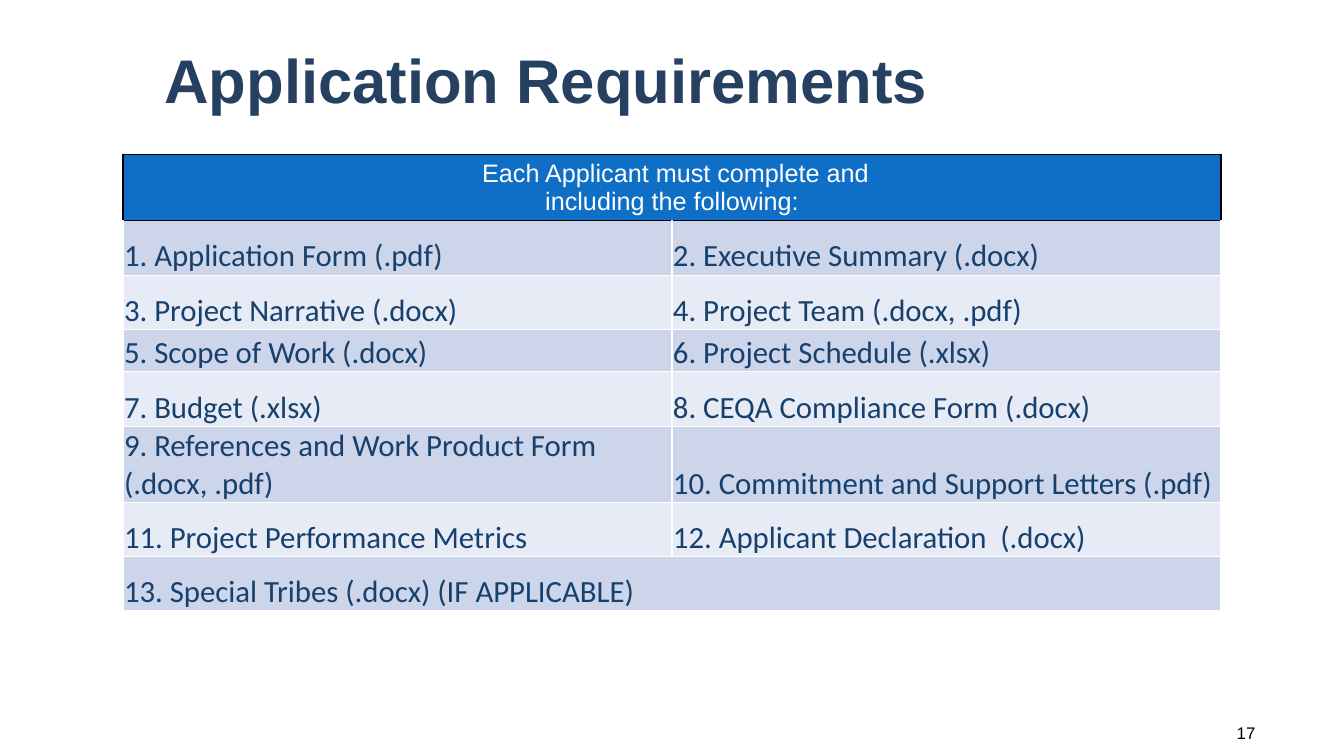
from lxml.etree import SubElement
from pptx import Presentation
from pptx.dml.color import RGBColor
from pptx.enum.text import MSO_ANCHOR, PP_ALIGN
from pptx.oxml.ns import qn
from pptx.util import Inches, Pt

TITLE = "Application Requirements"
HEADER = " Each Applicant must complete and\nincluding the following:"
REQUIREMENTS = [
    "1. Application Form (.pdf)",
    "2. Executive Summary (.docx)",
    "3. Project Narrative (.docx)",
    "4. Project Team (.docx, .pdf)",
    "5. Scope of Work (.docx)",
    "6. Project Schedule (.xlsx)",
    "7. Budget (.xlsx)",
    "8. CEQA Compliance Form (.docx)",
    "9. References and Work Product Form (.docx, .pdf)",
    "10. Commitment and Support Letters (.pdf)",
    "11. Project Performance Metrics",
    "12. Applicant Declaration  (.docx)",
    "13. Special Tribes (.docx) (IF APPLICABLE)",
]
PAGE_NUMBER = "17"
COLORS = {
    "title": "254061",
    "header": "0F6FC6",
    "text": "17406D",
    "odd": "CCD5EA",
    "even": "E7EBF5",
    "white": "FFFFFF",
    "black": "000000",
}
COLUMNS = 2
ROW_HEIGHT = 0.54
SPECIAL_HEIGHTS = {3: 0.42, 5: 0.58}
TABLE_LEFT, TABLE_TOP, TABLE_WIDTH = 1.22, 1.53, 10.89


def format_text(text_frame, font_name, size, color, alignment, bold=False):
    for paragraph in text_frame.paragraphs:
        paragraph.alignment = alignment
        for run in paragraph.runs:
            run.font.name = font_name
            run.font.size = Pt(size)
            run.font.bold = bold
            run.font.color.rgb = RGBColor.from_string(COLORS[color])


def style_cell(cell, fill, border, top_border):
    properties = cell._tc.get_or_add_tcPr()
    for side in ("L", "R", "T", "B"):
        line = SubElement(properties, qn(f"a:ln{side}"), w=str(Pt(1)))
        solid = SubElement(line, qn("a:solidFill"))
        color = top_border if side == "T" else border
        SubElement(solid, qn("a:srgbClr"), val=COLORS[color])
    cell.fill.solid()
    cell.fill.fore_color.rgb = RGBColor.from_string(COLORS[fill])


def add_title(slide):
    title = slide.shapes.title
    title.left, title.top = Inches(1.53), Inches(0.26)
    title.width, title.height = Inches(10.89), Inches(1.14)
    title.text_frame.text = TITLE
    title.text_frame.vertical_anchor = MSO_ANCHOR.MIDDLE
    title.text_frame.paragraphs[0].line_spacing = 0.9
    format_text(title.text_frame, "Arial", 44, "title", PP_ALIGN.LEFT, True)


def add_requirements(slide):
    row_count = 1 + -(-len(REQUIREMENTS) // COLUMNS)
    heights = [SPECIAL_HEIGHTS.get(row, ROW_HEIGHT) for row in range(row_count)]
    table = slide.shapes.add_table(
        row_count, COLUMNS, Inches(TABLE_LEFT), Inches(TABLE_TOP),
        Inches(TABLE_WIDTH), Inches(sum(heights))).table
    for row, height in zip(table.rows, heights):
        row.height = Inches(height)
    for row in range(row_count):
        for column in range(COLUMNS):
            if row == 0:
                style = ("header", "black", "black")
            else:
                style = ("odd" if row % 2 else "even", "white",
                         "black" if row == 1 else "white")
            style_cell(table.cell(row, column), *style)
    for row in (0, row_count - 1):
        table.cell(row, 0).merge(table.cell(row, COLUMNS - 1))

    header = table.cell(0, 0)
    header.text_frame.text = HEADER
    format_text(header.text_frame, "Arial", 18, "white", PP_ALIGN.CENTER)
    for index, requirement in enumerate(REQUIREMENTS):
        row, column = divmod(index, COLUMNS)
        cell = table.cell(row + 1, column)
        cell.margin_left = cell.margin_right = cell.margin_top = Inches(0.01)
        cell.margin_bottom = 0
        cell.vertical_anchor = MSO_ANCHOR.BOTTOM
        cell.text_frame.text = requirement
        format_text(cell.text_frame, "Calibri", 22, "text", PP_ALIGN.LEFT)


def add_page_number(slide):
    box = slide.shapes.add_textbox(
        Inches(10.58), Inches(7.07), Inches(1.97), Inches(0.4))
    box.text_frame.word_wrap = True
    box.text_frame.vertical_anchor = MSO_ANCHOR.MIDDLE
    box.text_frame.text = PAGE_NUMBER
    format_text(box.text_frame, "Arial", 12, "black", PP_ALIGN.RIGHT)


def main():
    presentation = Presentation()
    presentation.slide_width = Inches(13.33)
    presentation.slide_height = Inches(7.5)
    slide = presentation.slides.add_slide(presentation.slide_layouts[5])
    add_title(slide)
    add_requirements(slide)
    add_page_number(slide)
    presentation.save("out.pptx")


if __name__ == "__main__":
    main()
